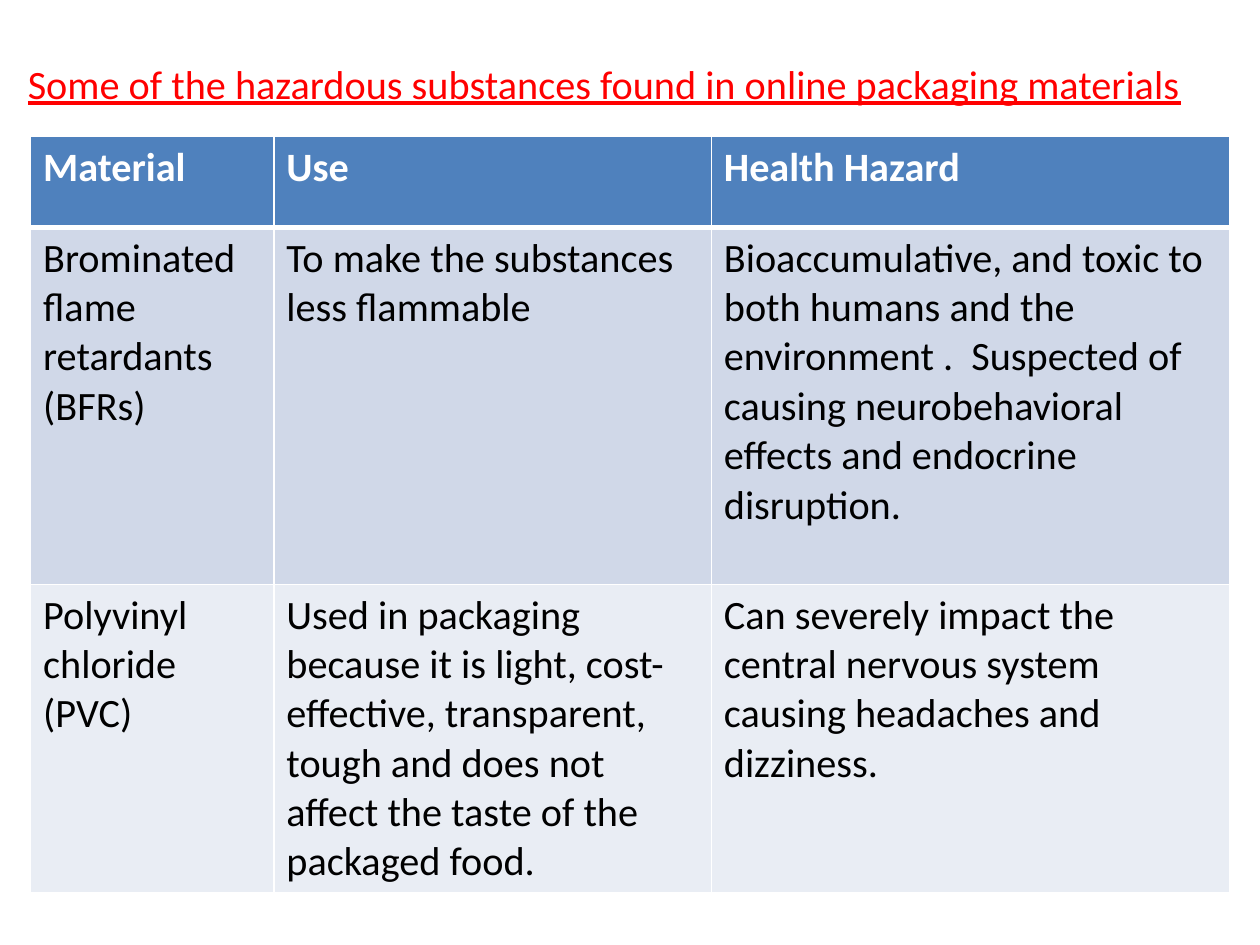
"""Build a slide with a table of hazardous substances in packaging."""
from lxml.etree import SubElement
from pptx import Presentation
from pptx.dml.color import RGBColor
from pptx.oxml.ns import qn
from pptx.util import Pt

TITLE = "Some of the hazardous substances found in online packaging materials"
ROWS = [
    ("Material", "Use", "Health Hazard"),
    (
        "Brominated flame retardants (BFRs)",
        "To make the substances less flammable",
        "Bioaccumulative, and toxic to both humans and the environment .  "
        "Suspected of causing neurobehavioral effects and endocrine disruption.",
    ),
    (
        "Polyvinyl chloride (PVC)",
        "Used in packaging because it is light, cost-effective, transparent, "
        "tough and does not affect the taste of the packaged food.",
        "Can severely impact the central nervous system causing headaches "
        "and dizziness.",
    ),
]
COLUMN_WIDTHS = [139, 250, 296]
ROW_HEIGHTS = [52, 204, 176]
ROW_FILLS = ["4F81BD", "D0D8E8", "E9EDF4"]


def color(value):
    return RGBColor.from_string(value)


def style_text(para, font_color, bold=False, underline=False):
    for span in para.runs:
        font = span.font
        font.name, font.size = "Calibri", Pt(23)
        font.bold, font.underline = bold, underline
        font.color.rgb = color(font_color)


def add_borders(cell, top, bottom):
    properties = cell._tc.get_or_add_tcPr()
    for side, width in (("L", 1), ("R", 1), ("T", top), ("B", bottom)):
        line = SubElement(properties, qn(f"a:ln{side}"), w=str(Pt(width)))
        fill = SubElement(line, qn("a:solidFill"))
        SubElement(fill, qn("a:srgbClr"), val="FFFFFF")


def add_title(page):
    box = page.shapes.add_textbox(Pt(8.8), Pt(16.5), Pt(711), Pt(45))
    box.text_frame.word_wrap = True
    para = box.text_frame.paragraphs[0]
    para.text = TITLE
    para.line_spacing = 1.5
    style_text(para, "FF0000", underline=True)


def add_hazard_table(page):
    table = page.shapes.add_table(
        len(ROWS), len(COLUMN_WIDTHS), Pt(17.5), Pt(78),
        Pt(sum(COLUMN_WIDTHS)), Pt(sum(ROW_HEIGHTS)),
    ).table
    for column, width in zip(table.columns, COLUMN_WIDTHS):
        column.width = Pt(width)
    for index, (row, height) in enumerate(zip(table.rows, ROW_HEIGHTS)):
        row.height = Pt(height)
        header = index == 0
        for cell, text in zip(row.cells, ROWS[index]):
            cell.text_frame.text = text
            style_text(cell.text_frame.paragraphs[0],
                       "FFFFFF" if header else "000000", bold=header)
            add_borders(cell, top=3 if index == 1 else 1, bottom=3 if header else 1)
            cell.fill.solid()
            cell.fill.fore_color.rgb = color(ROW_FILLS[index])


def main():
    deck = Presentation()
    deck.slide_width, deck.slide_height = Pt(720), Pt(540)
    page = deck.slides.add_slide(deck.slide_layouts[6])
    add_title(page)
    add_hazard_table(page)
    deck.save("out.pptx")


if __name__ == "__main__":
    main()
